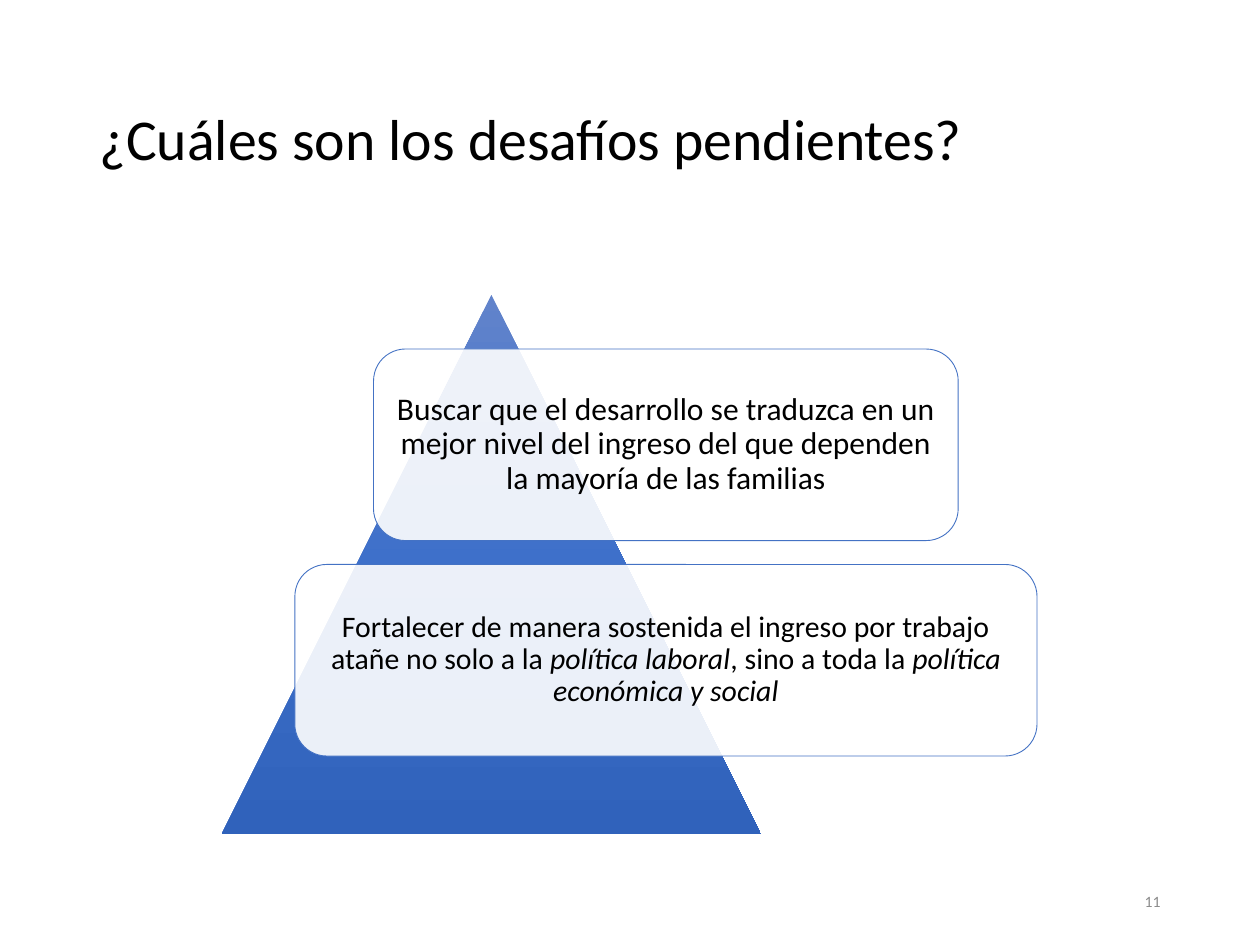
from copy import deepcopy
from dataclasses import dataclass

from pptx import Presentation
from pptx.dml.color import RGBColor as Color
from pptx.enum.shapes import MSO_SHAPE as Shape
from pptx.enum.text import MSO_ANCHOR as Anchor, PP_ALIGN as Align
from pptx.oxml.ns import qn
from pptx.util import Inches, Pt


@dataclass(frozen=True)
class Theme:
    """Colours, font and type sizes of the slide."""
    font: str = "Calibri"
    ink: str = "000000"
    muted: str = "8C8C8C"
    card: str = "FFFFFF"
    card_opacity: int = 90
    outline: str = "4472C4"
    outline_width: float = 0.5
    gradient: tuple = ("6183CB", "3E70CA", "3062BB")
    title_size: int = 33
    number_size: int = 9


@dataclass(frozen=True)
class Box:
    """A rectangle in columns and rows of the 100 by 75 grid."""
    left: float
    top: float
    width: float
    height: float

    def inside(self, left, top, width, height):
        """Return a box offset from this box's corner."""
        return Box(self.left + left, self.top + top, width, height)

    def place(self):
        """Return the four lengths that python-pptx expects."""
        return [Inches(cells * CELL) for cells in (self.left, self.top, self.width, self.height)]


THEME = Theme()
CELL = 0.1
COLUMNS, ROWS = 100, 75
CARDS = [
    (46.4, 18, [("Buscar que el desarrollo se traduzca en un mejor nivel del ingreso "
                 "del que dependen la mayoría de las familias", False)]),
    (58.9, 17, [("Fortalecer de manera sostenida el ingreso por trabajo atañe no solo a la ", False),
                ("política laboral", True),
                (", sino a toda la ", False),
                ("política económica y social", True)]),
]


def write(shape, spans, size, color, align, spacing=1.0):
    """Write one paragraph of (text, italic) spans, centred vertically."""
    frame = shape.text_frame
    frame.word_wrap = True
    frame.vertical_anchor = Anchor.MIDDLE
    para = frame.paragraphs[0]
    para.alignment, para.line_spacing = align, spacing
    para.font.name, para.font.size = THEME.font, Pt(size)
    para.font.color.rgb = Color.from_string(color)
    for text, italic in spans:
        span = para.add_run()
        span.text = text
        if italic:
            span.font.italic = True


def add_label(page, box, text, size, color, align, spacing=1.0):
    """Place a plain line of text in the box."""
    label = page.shapes.add_textbox(*box.place())
    write(label, [(text, False)], size, color, align, spacing)


def add_triangle(page, box):
    """Place the triangle with its three-stop vertical gradient."""
    triangle = page.shapes.add_shape(Shape.ISOSCELES_TRIANGLE, *box.place())
    triangle.shadow.inherit = False
    triangle.line.fill.background()
    triangle.fill.gradient()
    triangle.fill.gradient_angle = 270
    stops = triangle._element.spPr.find(".//" + qn("a:gsLst"))
    stops.append(deepcopy(stops[-1]))
    for index, (stop, color) in enumerate(zip(triangle.fill.gradient_stops, THEME.gradient)):
        stop.position = index / 2
        stop.color.rgb = Color.from_string(color)


def add_card(page, box, spans, size):
    """Place a translucent rounded card with centred text."""
    card = page.shapes.add_shape(Shape.ROUNDED_RECTANGLE, *box.place())
    card.shadow.inherit = False
    card.fill.solid()
    card.fill.fore_color.rgb = Color.from_string(THEME.card)
    tint = card._element.spPr.find(qn("a:solidFill"))[0]
    tint.makeelement(qn("a:alpha"))
    alpha = deepcopy(tint)
    alpha.tag = qn("a:alpha")
    alpha.set("val", str(THEME.card_opacity * 1000))
    tint.append(alpha)
    card.line.color.rgb = Color.from_string(THEME.outline)
    card.line.width = Pt(THEME.outline_width)
    frame = card.text_frame
    frame.margin_left = frame.margin_right = Inches(0.07)
    frame.margin_top = frame.margin_bottom = Inches(0.07)
    write(card, spans, size, THEME.ink, Align.CENTER, 0.9)


def add_pyramid(page, box):
    """Place the triangle and its stacked cards, which share one centre line."""
    add_triangle(page, box.inside(0, 0, box.height, box.height))
    center, first, height, gap = 35.25, 4.3, 15.2, 1.9
    for row, (width, size, spans) in enumerate(CARDS):
        top = first + row * (height + gap)
        add_card(page, box.inside(center - width / 2, top, width, height), spans, size)


def main():
    """Build and save the slide."""
    deck = Presentation()
    deck.slide_width, deck.slide_height = Inches(COLUMNS * CELL), Inches(ROWS * CELL)
    page = deck.slides.add_slide(deck.slide_layouts[6])
    add_pyramid(page, Box(17.6, 23.4, 64.7, 42.8))
    add_label(page, Box(6.9, 4, 86.2, 14.5), "¿Cuáles son los desafíos pendientes?",
              THEME.title_size, THEME.ink, Align.LEFT, 0.9)
    add_label(page, Box(70.6, 69.5, 22.5, 4), "11", THEME.number_size, THEME.muted, Align.RIGHT)
    deck.save("out.pptx")


if __name__ == "__main__":
    main()
